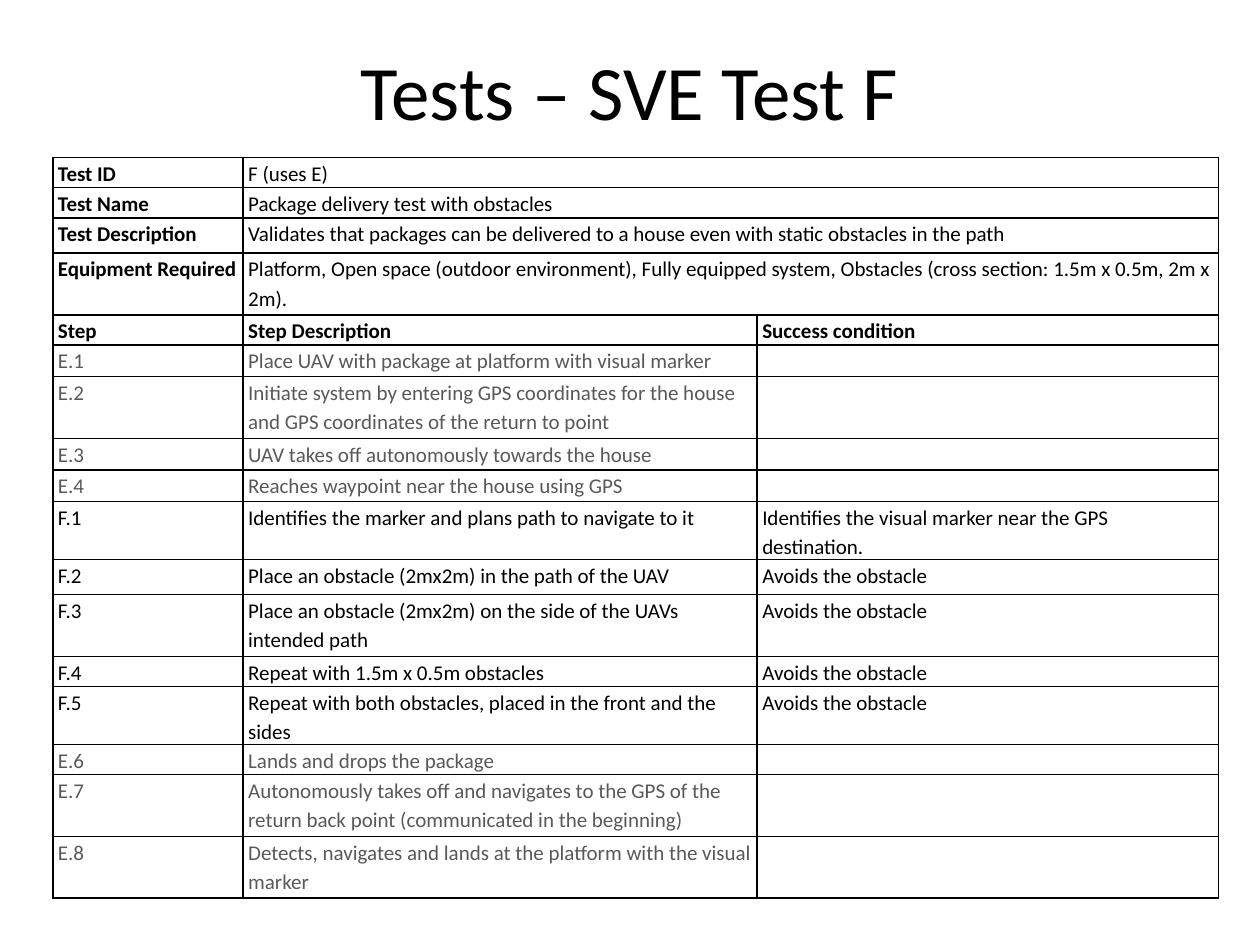
from lxml.etree import SubElement
from pptx import Presentation
from pptx.dml.color import RGBColor
from pptx.enum.text import MSO_ANCHOR, PP_ALIGN
from pptx.oxml.ns import qn
from pptx.util import Emu, Inches, Pt

FONT, BLACK, GREY = "Calibri", "000000", "595959"
COLUMN_WIDTHS = (1.51, 4.08, 3.66)
AVOIDS = "Avoids the obstacle"

# Each row: height in inches, then its cells
SUMMARY = [
    (0.24, "Test ID", "F (uses E)"),
    (0.24, "Test Name", "Package delivery test with obstacles"),
    (0.28, "Test Description",
     "Validates that packages can be delivered to a house even with static obstacles in the path"),
    (0.49, "Equipment Required",
     "Platform, Open space (outdoor environment), Fully equipped system, "
     "Obstacles (cross section: 1.5m x 0.5m, 2m x 2m)."),
]
STEP_HEADER = (0.24, "Step", "Step Description", "Success condition")
STEPS = [
    (0.25, "E.1", "Place UAV with package at platform with visual marker", ""),
    (0.49, "E.2", "Initiate system by entering GPS coordinates for the house "
                  "and GPS coordinates of the return to point", ""),
    (0.25, "E.3", "UAV takes off autonomously towards the house", ""),
    (0.25, "E.4", "Reaches waypoint near the house using GPS", ""),
    (0.28, "F.1", "Identifies the marker and plans path to navigate to it",
     "Identifies the visual marker near the GPS destination."),
    (0.28, "F.2", "Place an obstacle (2mx2m) in the path of the UAV", AVOIDS),
    (0.49, "F.3", "Place an obstacle (2mx2m) on the side of the UAVs intended path", AVOIDS),
    (0.24, "F.4", "Repeat with 1.5m x 0.5m obstacles", AVOIDS),
    (0.28, "F.5", "Repeat with both obstacles, placed in the front and the sides", AVOIDS),
    (0.24, "E.6", "Lands and drops the package", ""),
    (0.49, "E.7", "Autonomously takes off and navigates to the GPS of the return back point "
                  "(communicated in the beginning)", ""),
    (0.49, "E.8", "Detects, navigates and lands at the platform with the visual marker", ""),
]


def rgb(color):
    return RGBColor.from_string(color)


def style_runs(paragraph, size, color=BLACK, bold=False):
    for run in paragraph.runs:
        font = run.font
        font.name, font.size, font.bold = FONT, Pt(size), bold
        font.color.rgb = rgb(color)


def add_borders(cell, color=BLACK, width=1):
    properties = cell._tc.get_or_add_tcPr()
    for side in ("lnL", "lnR", "lnT", "lnB"):
        line = SubElement(properties, qn(f"a:{side}"), w=str(Pt(width)))
        fill = SubElement(line, qn("a:solidFill"))
        SubElement(fill, qn("a:srgbClr"), val=color)


def fill_cell(cell, words, color, bold):
    add_borders(cell)
    cell.fill.background()
    cell.margin_left = cell.margin_right = Inches(0.04)
    cell.margin_top = cell.margin_bottom = 0
    cell.text_frame.text = words
    paragraph = cell.text_frame.paragraphs[0]
    paragraph.line_spacing = 1.15
    style_runs(paragraph, 12, color, bold)
    if not words:  # keeps empty cells from stretching their row
        SubElement(paragraph._p, qn("a:endParaRPr"), sz="1200")


def add_title(slide, box, words):
    frame = slide.shapes.add_textbox(*box).text_frame
    frame.word_wrap = True
    frame.vertical_anchor = MSO_ANCHOR.MIDDLE
    frame.text = words
    heading = frame.paragraphs[0]
    heading.alignment = PP_ALIGN.CENTER
    style_runs(heading, 44)


def add_test_table(slide, box):
    rows = [*SUMMARY, STEP_HEADER, *STEPS]
    table = slide.shapes.add_table(len(rows), len(COLUMN_WIDTHS), *box).table
    table.first_row = table.horz_banding = False
    left, top, width, height = box
    for column, share in zip(table.columns, COLUMN_WIDTHS):
        column.width = Emu(int(width * share / sum(COLUMN_WIDTHS)))

    for index, (row_height, label, *details) in enumerate(rows):
        table.rows[index].height = Inches(row_height)
        is_summary = index < len(SUMMARY)
        is_header = index == len(SUMMARY)
        color = GREY if label.startswith("E.") else BLACK
        if is_summary:
            table.cell(index, 1).merge(table.cell(index, 2))
            details.append("")
        for column, words in enumerate([label, *details]):
            bold = is_header or (is_summary and column == 0)
            fill_cell(table.cell(index, column), words, color, bold)


def main():
    deck = Presentation()
    deck.slide_width, deck.slide_height = Inches(10), Inches(7.5)
    slide = deck.slides.add_slide(deck.slide_layouts[6])
    add_title(slide, [Inches(n) for n in (0.69, 0.17, 8.62, 1.09)], "Tests – SVE Test F")
    add_test_table(slide, [Inches(n) for n in (0.42, 1.25, 9.25, 5.85)])
    deck.save("out.pptx")


if __name__ == "__main__":
    main()
